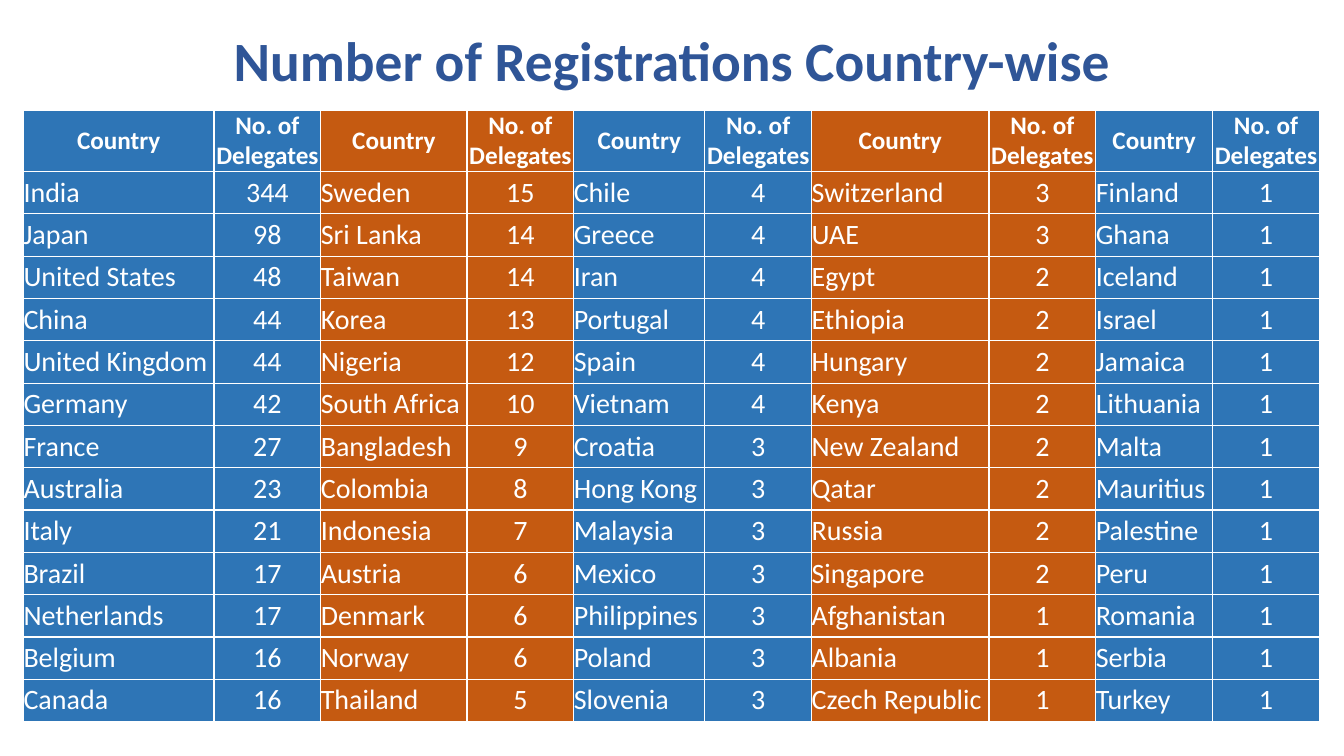
from lxml.etree import SubElement
from pptx import Presentation
from pptx.dml.color import RGBColor
from pptx.enum.text import MSO_ANCHOR, MSO_AUTO_SIZE, PP_ALIGN
from pptx.oxml.ns import qn
from pptx.util import Pt

COLORS = {"title": "2F5597", "blue": "2E75B6", "orange": "C55A11", "white": "FFFFFF"}
FONT = "Calibri"
HEADER_HEIGHT, ROW_HEIGHT = 43.6, 30.24
COUNTRY_WIDTHS = [136.1, 104.4, 93.6, 126.7, 83.5]
COUNT_WIDTH = 76.3

# One list per pair of columns, read from top to bottom
REGISTRATIONS = [
    [("India", 344), ("Japan", 98), ("United States", 48), ("China", 44),
     ("United Kingdom", 44), ("Germany", 42), ("France", 27), ("Australia", 23),
     ("Italy", 21), ("Brazil", 17), ("Netherlands", 17), ("Belgium", 16), ("Canada", 16)],
    [("Sweden", 15), ("Sri Lanka", 14), ("Taiwan", 14), ("Korea", 13),
     ("Nigeria", 12), ("South Africa", 10), ("Bangladesh", 9), ("Colombia", 8),
     ("Indonesia", 7), ("Austria", 6), ("Denmark", 6), ("Norway", 6), ("Thailand", 5)],
    [("Chile", 4), ("Greece", 4), ("Iran", 4), ("Portugal", 4),
     ("Spain", 4), ("Vietnam", 4), ("Croatia", 3), ("Hong Kong", 3),
     ("Malaysia", 3), ("Mexico", 3), ("Philippines", 3), ("Poland", 3), ("Slovenia", 3)],
    [("Switzerland", 3), ("UAE", 3), ("Egypt", 2), ("Ethiopia", 2),
     ("Hungary", 2), ("Kenya", 2), ("New Zealand", 2), ("Qatar", 2),
     ("Russia", 2), ("Singapore", 2), ("Afghanistan", 1), ("Albania", 1),
     ("Czech Republic", 1)],
    [("Finland", 1), ("Ghana", 1), ("Iceland", 1), ("Israel", 1),
     ("Jamaica", 1), ("Lithuania", 1), ("Malta", 1), ("Mauritius", 1),
     ("Palestine", 1), ("Peru", 1), ("Romania", 1), ("Serbia", 1), ("Turkey", 1)],
]


def write_text(frame, text, size, color="white", bold=False,
               align=PP_ALIGN.CENTER, line_spacing=None):
    """Write each line of the text as a paragraph."""
    for index, line in enumerate(text.split("\n")):
        paragraph = frame.add_paragraph() if index else frame.paragraphs[0]
        paragraph.alignment = align
        paragraph.line_spacing = line_spacing
        run = paragraph.add_run()
        run.text = line
        run.font.name = FONT
        run.font.size = Pt(size)
        run.font.bold = bold
        run.font.color.rgb = RGBColor.from_string(COLORS[color])


def add_borders(cell, color="white", width=1):
    properties = cell._tc.get_or_add_tcPr()
    for side in ("lnL", "lnR", "lnT", "lnB"):
        line = SubElement(properties, qn(f"a:{side}"), w=str(Pt(width)))
        fill = SubElement(line, qn("a:solidFill"))
        SubElement(fill, qn("a:srgbClr"), val=COLORS[color])


def format_cell(cell, text, fill, **text_format):
    cell.margin_left = cell.margin_right = cell.margin_top = cell.margin_bottom = 0
    cell.vertical_anchor = MSO_ANCHOR.MIDDLE
    # Borders come before the fill in the cell properties
    add_borders(cell)
    cell.fill.solid()
    cell.fill.fore_color.rgb = RGBColor.from_string(COLORS[fill])
    write_text(cell.text_frame, text, **text_format)


def place_title(slide, left, top, width, height):
    title = slide.shapes.title
    title.left, title.top, title.width, title.height = map(Pt, (left, top, width, height))
    frame = title.text_frame
    frame.word_wrap = True
    frame.auto_size = MSO_AUTO_SIZE.NONE
    frame.vertical_anchor = MSO_ANCHOR.MIDDLE
    write_text(frame, "Number of Registrations Country-wise", 39.6,
               color="title", bold=True, line_spacing=0.9)


def add_registration_table(slide, left, top, width, height):
    row_count = len(REGISTRATIONS[0]) + 1
    table = slide.shapes.add_table(row_count, 2 * len(REGISTRATIONS),
                                   Pt(left), Pt(top), Pt(width), Pt(height)).table
    table.horz_banding = False
    for index, row in enumerate(table.rows):
        row.height = Pt(ROW_HEIGHT if index else HEADER_HEIGHT)

    # Pairs of country and count columns, in alternating colours
    for pair, entries in enumerate(REGISTRATIONS):
        country_column, count_column = 2 * pair, 2 * pair + 1
        table.columns[country_column].width = Pt(COUNTRY_WIDTHS[pair])
        table.columns[count_column].width = Pt(COUNT_WIDTH)
        fill = "orange" if pair % 2 else "blue"
        for column, heading in ((country_column, "Country"),
                                (count_column, "No. of\nDelegates")):
            format_cell(table.cell(0, column), heading, fill, size=18, bold=True)
        for row, (country, count) in enumerate(entries, start=1):
            format_cell(table.cell(row, country_column), country, fill,
                        size=20, align=PP_ALIGN.LEFT)
            format_cell(table.cell(row, count_column), str(count), fill, size=20)


def main():
    presentation = Presentation()
    presentation.slide_width, presentation.slide_height = Pt(960), Pt(540)
    slide = presentation.slides.add_slide(presentation.slide_layouts[5])
    place_title(slide, 66, 25.2, 828, 41)
    table_width = sum(COUNTRY_WIDTHS) + COUNT_WIDTH * len(COUNTRY_WIDTHS)
    table_height = HEADER_HEIGHT + ROW_HEIGHT * len(REGISTRATIONS[0])
    add_registration_table(slide, 16.8, 78.6, table_width, table_height)
    presentation.save("out.pptx")


if __name__ == "__main__":
    main()
